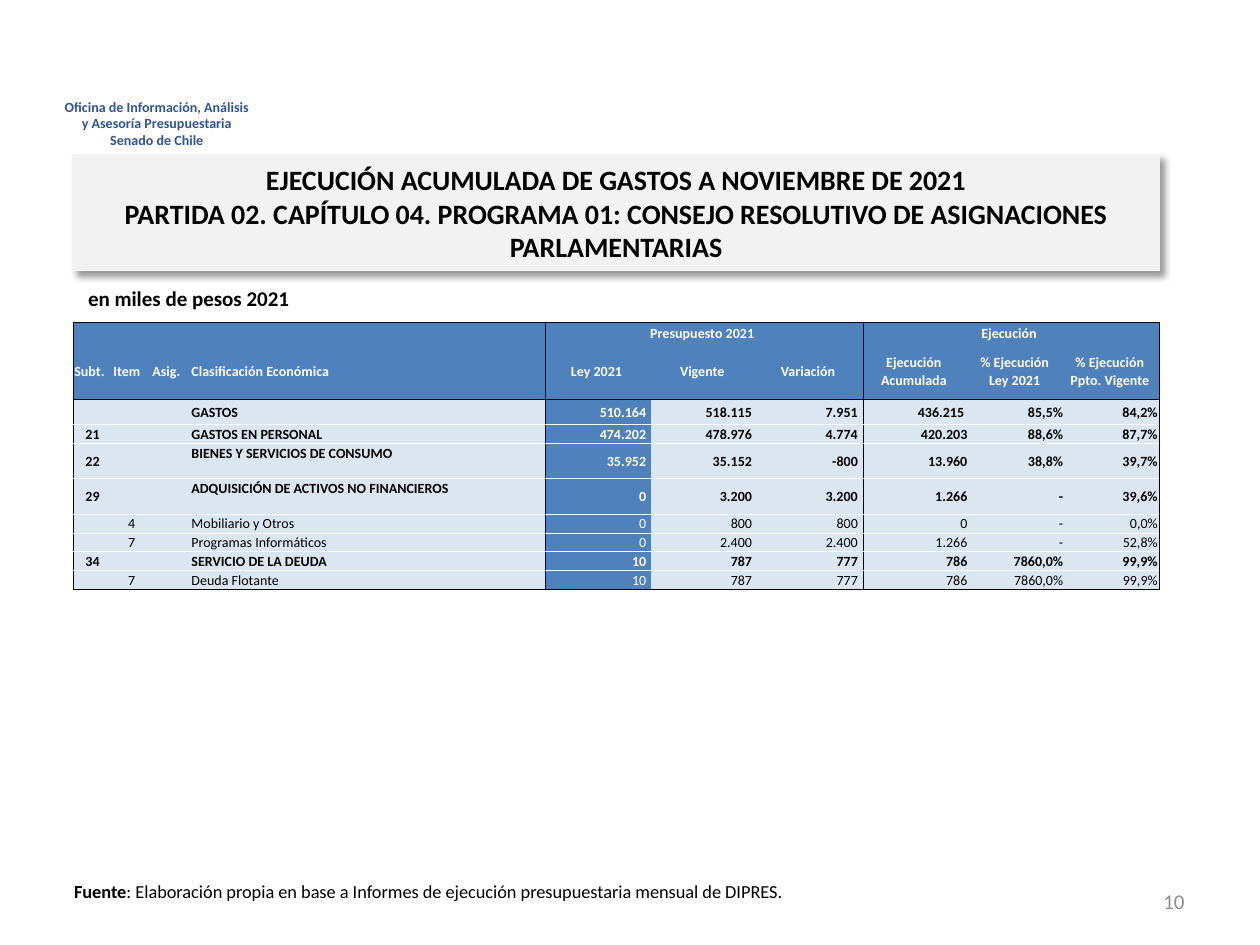
import pptx
import pptx.dml.color
import pptx.enum.shapes
import pptx.enum.text
import pptx.oxml
import pptx.oxml.ns
import pptx.util
from lxml import etree

Inches = pptx.util.Inches
Pt = pptx.util.Pt
RGBColor = pptx.dml.color.RGBColor
ALIGN = pptx.enum.text.PP_ALIGN
ANCHOR = pptx.enum.text.MSO_ANCHOR
qn = pptx.oxml.ns.qn

BLACK = RGBColor(0x00, 0x00, 0x00)
WHITE = RGBColor(0xFF, 0xFF, 0xFF)
NAVY = RGBColor(0x2F, 0x54, 0x96)
BLUE = RGBColor(0x4F, 0x81, 0xBD)
PALE_BLUE = RGBColor(0xDC, 0xE6, 0xF1)
PALE_GREY = RGBColor(0xF2, 0xF2, 0xF2)
GREY = RGBColor(0x8C, 0x8C, 0x8C)

OFFICE = ("Oficina de Información, Análisis y Asesoría Presupuestaria", "Senado de Chile")
TITLE = ("EJECUCIÓN ACUMULADA DE GASTOS A NOVIEMBRE DE 2021\v"
         "PARTIDA 02. CAPÍTULO 04. PROGRAMA 01: CONSEJO RESOLUTIVO DE ASIGNACIONES "
         "PARLAMENTARIAS")
UNITS = "en miles de pesos 2021"
SOURCE = ("Fuente", ": Elaboración propia en base a Informes de ejecución presupuestaria "
          "mensual de DIPRES.")
PAGE_NUMBER = "10"

GROUPS = ("", "", "", "", "Presupuesto 2021", "", "", "Ejecución", "", "")
HEADINGS = ("Subt.", "Item", "Asig.", "Clasificación Económica", "Ley 2021", "Vigente",
            "Variación", "Ejecución Acumulada", "% Ejecución Ley 2021",
            "% Ejecución Ppto. Vigente")
BUDGET_LINES = [
    ("", "", "", "GASTOS", "510.164", "518.115", "7.951", "436.215 ", "85,5%", "84,2%"),
    ("21", "", "", "GASTOS EN PERSONAL", "474.202", "478.976", "4.774", "420.203", "88,6%", "87,7%"),
    ("22", "", "", "BIENES Y SERVICIOS DE CONSUMO", "35.952", "35.152", "-800", "13.960", "38,8%", "39,7%"),
    ("29", "", "", "ADQUISICIÓN DE ACTIVOS NO FINANCIEROS", "0", "3.200", "3.200", "1.266", "-", "39,6%"),
    ("", "4", "", "Mobiliario y Otros", "0", "800", "800", "0", "-", "0,0%"),
    ("", "7", "", "Programas Informáticos", "0", "2.400", "2.400", "1.266", "-", "52,8%"),
    ("34", "", "", "SERVICIO DE LA DEUDA", "10", "787", "777", "786", "7860,0%", "99,9%"),
    ("", "7", "", "Deuda Flotante", "10", "787", "777", "786", "7860,0%", "99,9%"),
]
ROWS = [GROUPS, HEADINGS] + BUDGET_LINES
HEADER_ROWS = 2
COLUMN_WIDTHS = [0.31] * 3 + [2.82] + [0.84] * 4 + [0.76, 0.75]
ROW_HEIGHTS = [0.16, 0.45, 0.2, 0.15, 0.28, 0.28] + [0.15] * 4
NAME_COLUMN, LAW_COLUMN = 3, 4
GROUP_STARTS, GROUP_ENDS = (0, 4, 7), (3, 6, 9)
GROUP_SPAN = 3
NO_STYLE = "{2D5ABB26-0587-4C30-8999-92F81FD0307C}"


def write(frame, text, size=8, color=BLACK, bold=False, align=ALIGN.LEFT, font="Calibri",
          new_paragraph=False):
    """Append a run, starting a paragraph if asked; a vertical tab breaks the line."""
    paragraph = frame.add_paragraph() if new_paragraph else frame.paragraphs[-1]
    paragraph.alignment = align
    for index, line in enumerate(text.split("\v")):
        if index:
            paragraph.add_line_break()
        run = paragraph.add_run()
        run.text = line
        run.font.name = font
        run.font.size = Pt(size)
        run.font.bold = bold
        run.font.color.rgb = color


def add_text_box(slide, left, top, width, height, anchor=ANCHOR.TOP):
    frame = slide.shapes.add_textbox(*map(Inches, (left, top, width, height))).text_frame
    frame.word_wrap = True
    frame.vertical_anchor = anchor
    return frame


def add_title(slide, left, top, width, height):
    shape = slide.shapes.add_shape(pptx.enum.shapes.MSO_SHAPE.RECTANGLE,
                                   *map(Inches, (left, top, width, height)))
    shape.shadow.inherit = False
    shape.fill.solid()
    shape.fill.fore_color.rgb = PALE_GREY
    shape.line.color.rgb = PALE_GREY
    shape.line.width = Pt(0.75)
    add_shadow(shape)
    shape.text_frame.word_wrap = True
    shape.text_frame.vertical_anchor = ANCHOR.MIDDLE
    write(shape.text_frame, TITLE, size=16, bold=True, align=ALIGN.CENTER)


def add_shadow(shape):
    effects = shape._element.spPr.find(qn("a:effectLst"))
    shadow = etree.SubElement(effects, qn("a:outerShdw"), blurRad=str(Pt(4)), dist=str(Pt(3)),
                              dir="2700000", algn="tl", rotWithShape="0")
    color = etree.SubElement(shadow, qn("a:srgbClr"), val=str(BLACK))
    etree.SubElement(color, qn("a:alpha"), val="40000")


def set_borders(cell, edges):
    """Draw half-point lines; edges maps L, R, T, B in that order to a colour or None."""
    properties = cell._tc.get_or_add_tcPr()
    for position, (edge, color) in enumerate(edges.items()):
        line = etree.Element(qn("a:ln" + edge), w=str(Pt(0.5)))
        if color is None:
            etree.SubElement(line, qn("a:noFill"))
        else:
            fill = etree.SubElement(line, qn("a:solidFill"))
            etree.SubElement(fill, qn("a:srgbClr"), val=str(color))
        properties.insert(position, line)


def horizontal_edge(boundary):
    """Colour of the line above the row with this index."""
    if boundary in (0, HEADER_ROWS, len(ROWS)):
        return BLACK
    return WHITE if boundary > HEADER_ROWS else None


def cell_alignment(row, column):
    if column == NAME_COLUMN:
        return ALIGN.LEFT
    if row < HEADER_ROWS:
        return ALIGN.CENTER if column > NAME_COLUMN else ALIGN.LEFT
    return ALIGN.RIGHT if column > NAME_COLUMN else ALIGN.CENTER


def cell_anchor(row, column):
    if row == 0:
        return ANCHOR.BOTTOM
    tall_name = row > HEADER_ROWS and column == NAME_COLUMN
    return ANCHOR.TOP if tall_name else ANCHOR.MIDDLE


def format_cell(cell, row, column):
    is_header = row < HEADER_ROWS
    is_dark = is_header or column == LAW_COLUMN
    is_budget = LAW_COLUMN <= column < GROUP_STARTS[-1]
    is_wide_margin = column > NAME_COLUMN if is_header else is_budget
    cell.margin_left = cell.margin_top = Inches(0.01)
    cell.margin_right = Inches(0.04 if is_wide_margin else 0.01)
    cell.margin_bottom = 0
    cell.vertical_anchor = cell_anchor(row, column)
    cell.fill.solid()
    cell.fill.fore_color.rgb = BLUE if is_dark else PALE_BLUE
    last_column = column + (cell.span_width - 1 if cell.is_merge_origin else 0)
    set_borders(cell, {"L": BLACK if column in GROUP_STARTS else None,
                       "R": BLACK if last_column in GROUP_ENDS else None,
                       "T": horizontal_edge(row), "B": horizontal_edge(row + 1)})
    text = ROWS[row][column]
    if text:
        write(cell.text_frame, text, color=WHITE if is_dark else BLACK,
              bold=is_header or not ROWS[row][1], align=cell_alignment(row, column))
    else:
        etree.SubElement(cell.text_frame.paragraphs[0]._p, qn("a:endParaRPr"), sz="800")


def add_budget_table(slide, left, top):
    frame = slide.shapes.add_table(len(ROWS), len(COLUMN_WIDTHS), Inches(left), Inches(top),
                                   Inches(sum(COLUMN_WIDTHS)), Inches(sum(ROW_HEIGHTS)))
    table = frame.table
    table.first_row = table.horz_banding = False
    table._tbl.tblPr.find(qn("a:tableStyleId")).text = NO_STYLE
    for column, width in zip(table.columns, COLUMN_WIDTHS):
        column.width = Inches(width)
    for row, height in zip(table.rows, ROW_HEIGHTS):
        row.height = Inches(height)
    for start in GROUP_STARTS[1:]:
        table.cell(0, start).merge(table.cell(0, start + GROUP_SPAN - 1))
    for row in range(len(ROWS)):
        for column in range(len(COLUMN_WIDTHS)):
            format_cell(table.cell(row, column), row, column)


def main():
    presentation = pptx.Presentation()
    presentation.slide_width, presentation.slide_height = Inches(10), Inches(7.5)
    slide = presentation.slides.add_slide(presentation.slide_layouts[6])

    office = add_text_box(slide, 0.39, 0.73, 1.71, 0.5)
    for index, line in enumerate(OFFICE):
        write(office, line, color=NAVY, bold=True, align=ALIGN.CENTER, new_paragraph=index > 0)

    add_title(slide, 0.58, 1.23, 8.62, 0.92)

    page = add_text_box(slide, 7.17, 6.95, 2.33, 0.4, ANCHOR.MIDDLE)
    write(page, PAGE_NUMBER, size=12, color=GREY, align=ALIGN.RIGHT)
    write(add_text_box(slide, 0.6, 2.22, 8.68, 0.27), UNITS, size=12, bold=True)
    source = add_text_box(slide, 0.49, 6.94, 9, 0.4)
    for text, bold in zip(SOURCE, (True, False)):
        write(source, text, size=10.5, bold=bold)

    add_budget_table(slide, 0.58, 2.56)
    presentation.save("out.pptx")


if __name__ == "__main__":
    main()
